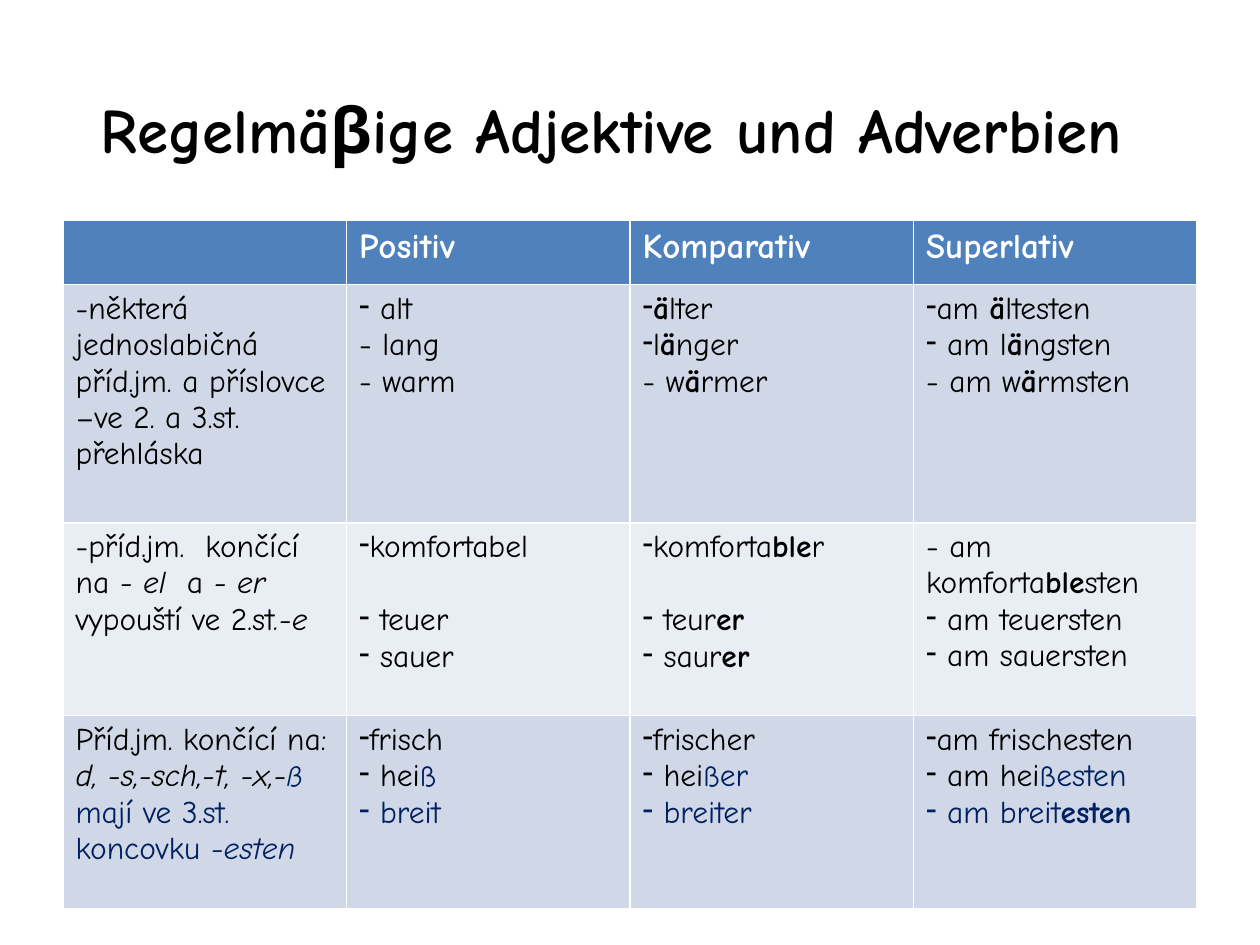
from pptx import Presentation
from pptx.dml.color import RGBColor
from pptx.enum.text import MSO_ANCHOR, PP_ALIGN
from pptx.util import Pt
from lxml.etree import SubElement
from pptx.oxml.ns import qn

HUES = {"head": "4F81BD", "odd": "D0D8E8", "even": "E9EDF4",
        "white": "FFFFFF", "black": "000000", "navy": "002060"}
FACE = "Comic Neue"
# Line marks: leading • = dash bullet, leading ^ = one line of space before.
# Runs are split by |; a run may start with * bold, _ italic, ~ navy.
ROWS = [
    (36.7, "head", ["", ["Positiv"], ["Komparativ"], ["Superlativ"]]),
    (136.1, "odd", [
        ["-některá jednoslabičná příd.jm. a příslovce –ve 2. a 3.st. přehláska"],
        ["• alt", "- lang", "- warm"],
        ["•|*ä|lter", "•l|*ä|nger", "- w|*ä|rmer"],
        ["•am |*ä|ltesten", "• am l|*ä|ngsten", "- am w|*ä|rmsten"]]),
    (110.2, "even", [
        ["-příd.jm.  končící na |_- el  |a |_- er |vypouští ve 2.st|_.-e"],
        ["•komfortabel", "^• teuer", "• sauer"],
        ["•komforta|*ble|r", "^• teur|*er", "• saur|*er"],
        ["- am komforta|*ble|sten", "• am teuersten", "• am sauersten"]]),
    (110.2, "odd", [
        ["Příd.jm. končící na: |_d, -s,-sch,-t, -x,-|_~ß |"
         "~mají ve 3.st. koncovku |_~-esten"],
        ["•frisch", "• hei|~ß", "•|~ breit"],
        ["•frischer", "• hei|~ßer", "•|~ breiter"],
        ["•am frischesten", "• hei|~ßesten".replace("hei", "am hei"),
         "•|~ am breit|*~esten"]]),
]


def style(font, hue, **vals):
    for key, val in vals.items():
        setattr(font, key, val)
    font.color.rgb = RGBColor.from_string(HUES[hue])


def write(para, line, size, hue, bold):
    if line.startswith("^"):
        para.space_before = Pt(21)
        line = line[1:]
    if line.startswith("•"):
        props = para._p.get_or_add_pPr()
        props.set("marL", "0")
        props.set("indent", "0")
        SubElement(props, qn("a:buFontTx"))
        SubElement(props, qn("a:buChar")).set("char", "-")
        line = line[1:]
    for part in filter(None, line.split("|")):
        text = part.lstrip("*_~")
        marks = part[:len(part) - len(text)]
        run = para.add_run()
        run.text = text
        style(run.font, "navy" if "~" in marks else hue, name=FACE,
              size=Pt(size), bold=bold or "*" in marks, italic="_" in marks)


deck = Presentation()
deck.slide_width, deck.slide_height = Pt(720), Pt(540)
slide = deck.slides.add_slide(deck.slide_layouts[5])

# Title
title = slide.shapes.title
place = {"left": 25.2, "top": 25.9, "width": 648, "height": 90}
for key, val in place.items():
    setattr(title, key, Pt(val))
frame = title.text_frame
frame.word_wrap = True
frame.vertical_anchor = MSO_ANCHOR.MIDDLE
frame.margin_top = Pt(8)
para = frame.paragraphs[0]
para.alignment = PP_ALIGN.CENTER
write(para, "Regelmäβige Adjektive und Adverbien", 36, "black", True)

# Table
high = sum(row[0] for row in ROWS)
table = slide.shapes.add_table(4, 4, Pt(36), Pt(126), Pt(648), Pt(high)).table
for r, (tall, fill, cells) in enumerate(ROWS):
    table.rows[r].height = Pt(tall)
    top = r == 0
    for c, lines in enumerate(cells):
        cell = table.cell(r, c)
        cell.fill.solid()
        cell.fill.fore_color.rgb = RGBColor.from_string(HUES[fill])
        frame = cell.text_frame
        for n, line in enumerate(lines):
            para = frame.add_paragraph() if n else frame.paragraphs[0]
            write(para, line, 20 if top else 18,
                  "white" if top else "black", top)

deck.save("out.pptx")
